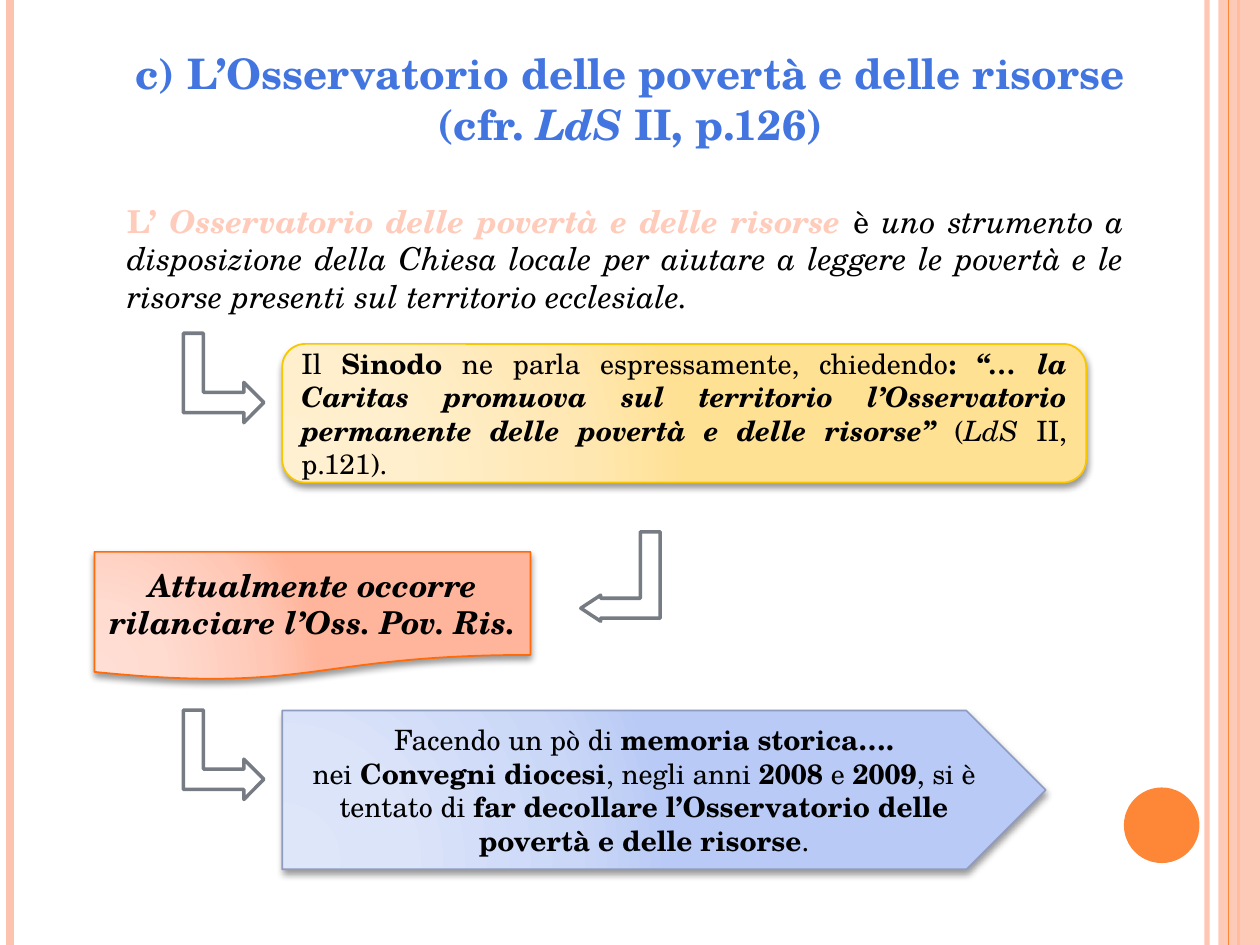
"""Builds the slide on the Osservatorio delle povertà e delle risorse."""
from lxml import etree
from pptx import Presentation
from pptx.dml.color import RGBColor
from pptx.enum.shapes import MSO_CONNECTOR, MSO_SHAPE
from pptx.enum.text import MSO_ANCHOR, PP_ALIGN
from pptx.oxml import parse_xml
from pptx.oxml.ns import nsdecls, qn
from pptx.util import Inches, Pt

FONT = "TeX Gyre Schola"
BLACK, WHITE, GREY = "000000", "FFFFFF", "777C84"
BLUE, PEACH, PINK, ORANGE = "4275DF", "FFCCBB", "FEC3AE", "FE8637"
STOPS = (0, 30, 75, 100)


def rgb(value):
    return RGBColor.from_string(value)


def set_alpha(shape, percent):
    color = next(shape._element.spPr.iter(qn("a:srgbClr")))
    etree.SubElement(color, qn("a:alpha")).set("val", str(percent * 1000))


class SlideBuilder:
    """Holds the text style and the current slide."""

    def __init__(self, presentation):
        self.slide = presentation.slides.add_slide(presentation.slide_layouts[5])
        self.shapes = self.slide.shapes

    def fill_text(self, frame, paragraphs, size, align, color=BLACK):
        frame.word_wrap = True
        for index, runs in enumerate(paragraphs):
            paragraph = frame.paragraphs[0] if index == 0 else frame.add_paragraph()
            paragraph.alignment = align
            for text, style, *own_color in runs:
                run = paragraph.add_run()
                run.text = text
                font = run.font
                font.name, font.size = FONT, Pt(size)
                font.bold, font.italic = "b" in style, "i" in style
                font.color.rgb = rgb(own_color[0] if own_color else color)

    def title(self, box, runs):
        title = self.shapes.title
        title.left, title.top, title.width, title.height = map(Inches, box)
        frame = title.text_frame
        frame.vertical_anchor = MSO_ANCHOR.BOTTOM
        frame.margin_left = frame.margin_right = Inches(0.2)
        self.fill_text(frame, [runs], 24, PP_ALIGN.CENTER, BLUE)

    def text(self, box, runs):
        shape = self.shapes.add_textbox(*map(Inches, box))
        self.fill_text(shape.text_frame, [runs], 18, PP_ALIGN.JUSTIFY)

    def vertical_line(self, x, color, width, alpha=100):
        line = self.shapes.add_connector(
            MSO_CONNECTOR.STRAIGHT, Inches(x), 0, Inches(x), Inches(7.5))
        line.line.color.rgb = rgb(color)
        line.line.width = Pt(width)
        etree.SubElement(line._element.spPr, qn("a:effectLst"))
        if alpha < 100:
            set_alpha(line, alpha)

    def shape(self, kind, box, fill, line=None, width=1):
        shape = self.shapes.add_shape(kind, *map(Inches, box))
        shape.shadow.inherit = False
        shape.fill.solid()
        shape.fill.fore_color.rgb = rgb(fill)
        if line:
            shape.line.color.rgb = rgb(line)
            shape.line.width = Pt(width)
        else:
            shape.line.fill.background()
        return shape

    def bent_arrow(self, box, mirrored=False):
        arrow = self.shape(MSO_SHAPE.BENT_UP_ARROW, box, WHITE, GREY, 2)
        arrow.rotation = 90
        if mirrored:
            arrow._element.spPr.xfrm.set("flipV", "1")
            arrow.adjustments[1] = 0.164

    def panel(self, kind, box, colors, line, paragraphs, size, align):
        panel = self.shape(kind, box, colors[0], line)
        properties = panel._element.spPr
        stops = "".join(
            f'<a:gs pos="{stop * 1000}"><a:srgbClr val="{color}"/></a:gs>'
            for stop, color in zip(STOPS, colors))
        properties.replace(properties.find(qn("a:solidFill")), parse_xml(
            f'<a:gradFill {nsdecls("a")} rotWithShape="1"><a:gsLst>{stops}</a:gsLst>'
            '<a:path path="circle"><a:fillToRect l="5000" t="100000" r="120000" b="10000"/>'
            '</a:path></a:gradFill>'))
        properties.find(qn("a:effectLst")).append(parse_xml(
            f'<a:outerShdw {nsdecls("a")} blurRad="{Pt(4)}" dist="{Pt(2)}" dir="5400000" '
            f'rotWithShape="0"><a:srgbClr val="{BLACK}"><a:alpha val="40000"/></a:srgbClr>'
            '</a:outerShdw>'))
        panel.text_frame.vertical_anchor = MSO_ANCHOR.MIDDLE
        self.fill_text(panel.text_frame, paragraphs, size, align)


def main():
    presentation = Presentation()
    presentation.slide_width, presentation.slide_height = Inches(10), Inches(7.5)
    builder = SlideBuilder(presentation)

    builder.vertical_line(9.58, PINK, 3, 93)
    builder.vertical_line(0.08, PINK, 4.5)
    builder.vertical_line(9.83, ORANGE, 1.5)
    set_alpha(builder.shape(MSO_SHAPE.RECTANGLE, (9.67, 0, 0.33, 7.5), PINK), 87)
    builder.vertical_line(9.75, ORANGE, 0.75)
    builder.shape(MSO_SHAPE.OVAL, (8.92, 6.25, 0.6, 0.6), ORANGE)

    builder.title((0.59, 0.36, 8.82, 0.87), [
        ("c) L’Osservatorio delle povertà e delle risorse (cfr. ", "b"),
        ("LdS", "bi"), (" II, p.126)", "b")])
    builder.text((0.91, 1.55, 8.11, 1.01), [
        ("L’ ", "b", PEACH),
        ("Osservatorio delle povertà e delle risorse ", "bi", PEACH),
        ("è ", ""),
        ("uno strumento a disposizione della Chiesa locale per aiutare a leggere "
         "le povertà e le risorse presenti sul territorio ecclesiale.", "i")])

    builder.bent_arrow((1.42, 2.68, 0.71, 0.64))
    builder.panel(
        MSO_SHAPE.ROUNDED_RECTANGLE, (2.24, 2.73, 6.38, 1.1),
        ("FFF0D1", "FFEFCC", "FFE7B1", "FFE193"), "F8C700",
        [[("Il ", ""), ("Sinodo", "b"),
          (" ne parla espressamente, chiedendo", ""), (": ", "b"),
          ("“… la Caritas promuova sul territorio l’Osservatorio permanente "
           "delle povertà e delle risorse” ", "bi"),
          ("(", ""), ("LdS", "i"), (" II, p.121).", "")]],
        16, PP_ALIGN.JUSTIFY)
    builder.panel(
        MSO_SHAPE.FLOWCHART_DOCUMENT, (0.75, 4.38, 3.46, 1.02),
        ("FFDED5", "FFDBD0", "FFC8B6", "FFB59B"), "FF6B0A",
        [[("Attualmente occorre rilanciare l’Oss. Pov. Ris.", "bi")]],
        18, PP_ALIGN.CENTER)
    builder.bent_arrow((4.57, 4.26, 0.71, 0.63), mirrored=True)
    builder.panel(
        MSO_SHAPE.PENTAGON, (2.24, 5.64, 6.06, 1.26),
        ("DEE6FA", "DBE4F9", "CAD7F7", "B8CAF5"), "8D9CBF",
        [[("Facendo un pò di ", ""), ("memoria storica….", "b")],
         [("nei ", ""), ("Convegni diocesi", "b"), (", negli anni ", ""),
          ("2008", "b"), (" e ", ""), ("2009", "b"), (", si è tentato di ", ""),
          ("far decollare l’Osservatorio delle povertà e delle risorse", "b"),
          (".", "")]],
        16, PP_ALIGN.CENTER)
    builder.bent_arrow((1.42, 5.67, 0.71, 0.64))

    presentation.save("out.pptx")


if __name__ == "__main__":
    main()
